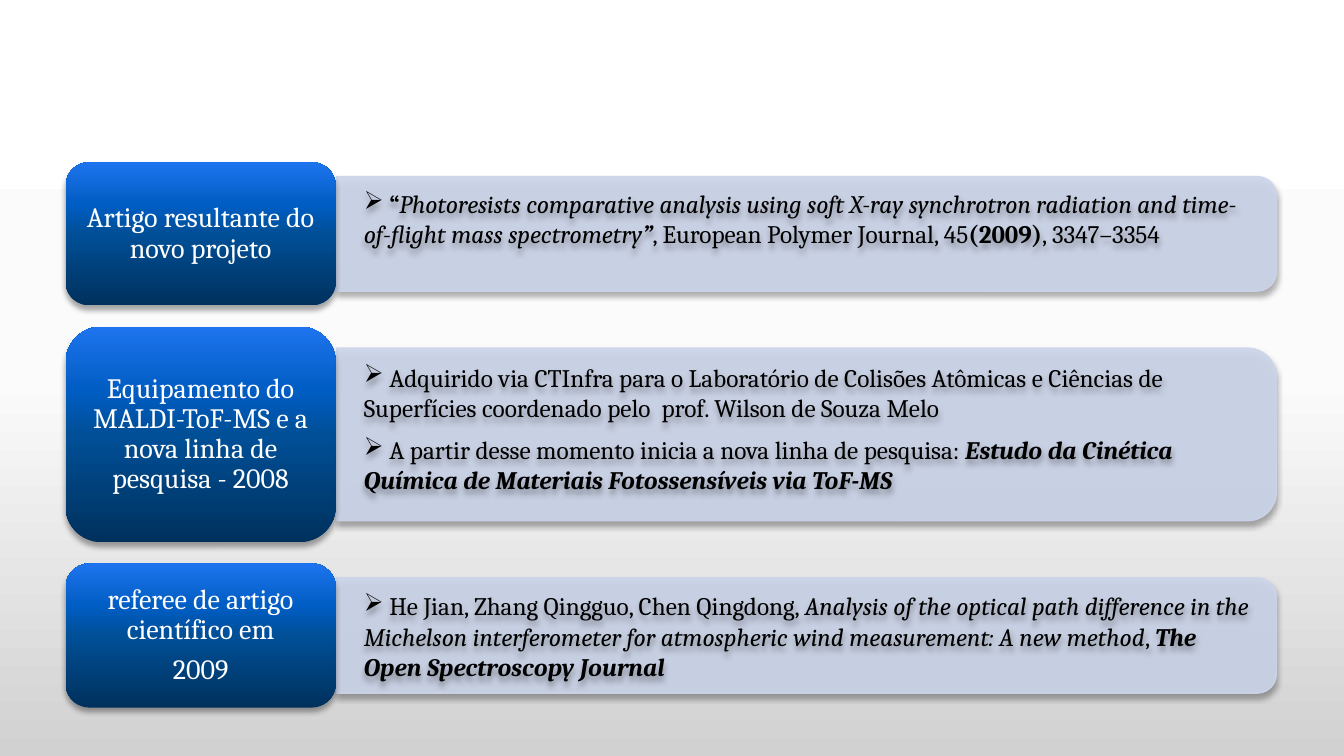
"""Build a slide of three milestone cards, each with a label and a detail panel."""
import pptx
import pptx.dml.color
import pptx.enum.shapes
import pptx.enum.text
import pptx.oxml
import pptx.oxml.ns
import pptx.util

Inches = pptx.util.Inches
Pt = pptx.util.Pt
RGBColor = pptx.dml.color.RGBColor
SHAPE = pptx.enum.shapes.MSO_SHAPE
ALIGN = pptx.enum.text.PP_ALIGN
ANCHOR = pptx.enum.text.MSO_ANCHOR
qn = pptx.oxml.ns.qn

WHITE = RGBColor(0xFF, 0xFF, 0xFF)
BLACK = RGBColor(0, 0, 0)
PANEL = RGBColor(0xCC, 0xD5, 0xEA)
BACKDROP = [(0, WHITE), (50, RGBColor(0xFB, 0xFB, 0xFB)), (100, RGBColor(0xD1, 0xD1, 0xD1))]
BLUES = [(0, RGBColor(0x00, 0x31, 0x5D)), (50, RGBColor(0x00, 0x4F, 0x97)),
         (70, RGBColor(0x00, 0x5D, 0xC3)), (100, RGBColor(0x1E, 0x74, 0xEE))]
LABEL_FONT = {"name": "Cambria", "size": Pt(20)}
DETAIL_FONT = {"name": "Cambria", "size": Pt(18)}
LABEL_PARA = {"alignment": ALIGN.CENTER, "line_spacing": 0.9, "space_after": Pt(7)}
LABEL_FRAME = {"word_wrap": True, "vertical_anchor": ANCHOR.MIDDLE,
               "margin_left": Inches(0.08), "margin_right": Inches(0.08),
               "margin_top": Inches(0.04), "margin_bottom": Inches(0.04)}

FIRST_TOP, GAP = 1.61, 0.21
LABEL_LEFT, LABEL_WIDTH = 0.65, 2.68
PANEL_CENTER, PANEL_WIDTH, PANEL_RATIO = 8.0, 9.32, 0.8
DETAIL_LEFT, DETAIL_WIDTH = 3.51, 8.98

CARDS = [
    (1.42, ["Artigo resultante do novo projeto"], [
        (1.82, 1.01, [
            (" “", "b"),
            ("Photoresists comparative analysis using soft X-ray synchrotron radiation "
             "and time-of-flight mass spectrometry", "i"),
            ("”", "bi"), (", European Polymer Journal, 45", ""),
            ("(2009)", "b"), (", 3347–3354", "")])]),
    (2.14, ["Equipamento do MALDI-ToF-MS e a nova linha de pesquisa - 2008"], [
        (3.54, 0.71, [
            (" ", "b"),
            ("Adquirido via CTInfra para o Laboratório de Colisões Atômicas e Ciências de "
             "Superfícies coordenado pelo  prof. Wilson de Souza Melo", "")]),
        (4.26, 0.71, [
            (" ", "b"),
            ("A partir desse momento inicia a nova linha de pesquisa: ", ""),
            ("Estudo da Cinética Química de Materiais Fotossensíveis via ToF-MS", "bi")])]),
    (1.43, ["referee de artigo científico em", "2009"], [
        (5.81, 1.01, [
            (" ", "b"),
            ("He Jian, Zhang Qingguo, Chen Qingdong, ", ""),
            ("Analysis of the optical path difference in the Michelson interferometer for "
             "atmospheric wind measurement: A new method", "i"),
            (", ", ""), ("The Open Spectroscopy Journal", "bi")])]),
]


def apply(obj, values):
    """Set each named attribute of an object."""
    for name, value in values.items():
        setattr(obj, name, value)


def add_node(parent, tag, **attrs):
    """Append a DrawingML child element with attributes."""
    node = pptx.oxml.parse_xml(f"<a:{tag} {pptx.oxml.ns.nsdecls('a')}/>")
    for name, value in attrs.items():
        node.set(name, str(value))
    parent.append(node)
    return node


def set_gradient(parent, stops, angle):
    """Turn the solid fill inside an element into a linear gradient."""
    solid = parent.find(qn("a:solidFill"))
    grad = add_node(parent, "gradFill", rotWithShape=1)
    gs_list = add_node(grad, "gsLst")
    for pos, color in stops:
        add_node(add_node(gs_list, "gs", pos=pos * 1000), "srgbClr", val=color)
    add_node(grad, "lin", ang=angle * 60000, scaled=0)
    parent.replace(solid, grad)


def add_shadow(sp):
    """Give a shape a soft shadow falling straight down."""
    sp.shadow.inherit = False
    effects = sp._element.spPr.find(qn("a:effectLst"))
    outer = add_node(effects, "outerShdw", blurRad=Pt(4), dist=Pt(3), dir=5400000,
                     rotWithShape=0)
    add_node(add_node(outer, "srgbClr", val=BLACK), "alpha", val=35000)


def set_backdrop(s):
    """Paint the slide background."""
    fill = s.background.fill
    fill.solid()
    fill.fore_color.rgb = WHITE
    set_gradient(s._element.cSld.bg.bgPr, BACKDROP, 90)


def add_panel(s, middle, height):
    """Add a translucent panel rounded on its right side."""
    sp = s.shapes.add_shape(SHAPE.ROUND_2_SAME_RECTANGLE,
                            Inches(PANEL_CENTER - height / 2), Inches(middle - PANEL_WIDTH / 2),
                            Inches(height), Inches(PANEL_WIDTH))
    sp.rotation = 90
    sp.line.width = Pt(1)
    for fill in (sp.fill, sp.line.fill):
        fill.solid()
        fill.fore_color.rgb = PANEL
    for color in sp._element.spPr.iter(qn("a:srgbClr")):
        add_node(color, "alpha", val=90000)
    add_shadow(sp)


def add_label(s, top, height, lines):
    """Add a blue rounded box with centred white text."""
    sp = s.shapes.add_shape(SHAPE.ROUNDED_RECTANGLE, Inches(LABEL_LEFT), Inches(top),
                            Inches(LABEL_WIDTH), Inches(height))
    sp.fill.solid()
    sp.fill.fore_color.rgb = WHITE
    set_gradient(sp._element.spPr, BLUES, 270)
    sp.line.fill.background()
    add_shadow(sp)
    tf = sp.text_frame
    apply(tf, LABEL_FRAME)
    tf.text = "\n".join(lines)
    for p in tf.paragraphs:
        apply(p, LABEL_PARA)
        for r in p.runs:
            apply(r.font, LABEL_FONT)
            r.font.color.rgb = WHITE


def add_detail(s, top, height, runs):
    """Add one bulleted paragraph of mixed bold and italic runs."""
    sp = s.shapes.add_textbox(Inches(DETAIL_LEFT), Inches(top),
                              Inches(DETAIL_WIDTH), Inches(height))
    add_shadow(sp)
    tf = sp.text_frame
    tf.word_wrap = True
    p = tf.paragraphs[0]
    add_node(p._p.get_or_add_pPr(), "buChar", char="➢")
    for text, style in runs:
        r = p.add_run()
        r.text = text
        apply(r.font, {**DETAIL_FONT, "bold": "b" in style, "italic": "i" in style})
        r.font.color.rgb = BLACK


def main():
    """Build and save the slide."""
    prs = pptx.Presentation()
    apply(prs, {"slide_width": Inches(13.33), "slide_height": Inches(7.5)})
    s = prs.slides.add_slide(prs.slide_layouts[6])
    set_backdrop(s)
    top = FIRST_TOP
    for height, lines, details in CARDS:
        add_panel(s, top + height / 2, height * PANEL_RATIO)
        add_label(s, top, height, lines)
        for detail in details:
            add_detail(s, *detail)
        top += height + GAP
    prs.save("out.pptx")


if __name__ == "__main__":
    main()
